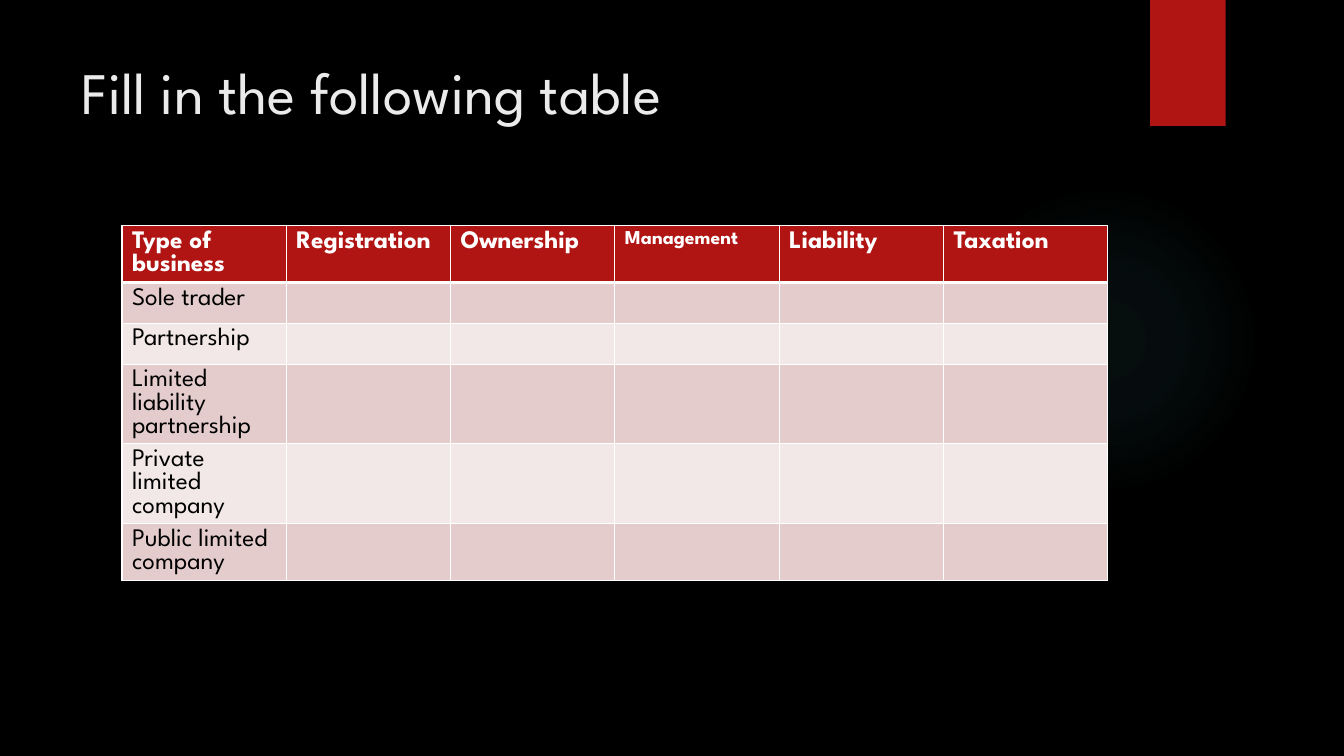
from dataclasses import dataclass

from pptx import Presentation
from pptx import util as u
from pptx.dml.color import RGBColor
from pptx.enum import shapes, text
from pptx.oxml import parse_xml
from pptx.oxml.ns import nsdecls

FONT = "League Spartan"
COLOURS = {
    "background": "000000",
    "glow": "50B9C1",
    "accent": "B01513",
    "title": "EBEBEB",
    "rule": "FFFFFF",
    "header text": "FFFFFF",
    "body text": "000000",
    "odd row": "E4CCCC",
    "even row": "F2E8E7",
}
UNIT = u.Inches(1 / 12)  # the slide is a grid of 160 columns by 90 rows
GLOW_STOPS = ((0, 7), (36, 6), (69, 0))  # position and opacity, in percent
ROW_HEIGHT = 4.87


@dataclass(frozen=True)
class Area:
    column: float
    row: float
    columns: float
    rows: float

    def emu(self) -> tuple[int, ...]:
        return tuple(round(n * UNIT) for n in (self.column, self.row, self.columns, self.rows))


@dataclass(frozen=True)
class Heading:
    label: str
    size: int = 18


HEADINGS = (
    Heading("Type of business"),
    Heading("Registration"),
    Heading("Ownership"),
    Heading("Management", 14),
    Heading("Liability"),
    Heading("Taxation"),
)
BUSINESSES = (
    "Sole trader",
    "Partnership",
    "Limited liability partnership",
    "Private limited company",
    "Public limited company",
)
TITLE_AREA = Area(8.52, 6, 123.48, 18.36)
GLOW_AREA = Area(112.92, 21.96, 36.96, 36.96)
RIBBON_AREA = Area(136.92, 0, 9, 15)
TABLE_AREA = Area(14.52, 26.88, 117.36, ROW_HEIGHT * (len(BUSINESSES) + 1))


def colour(name: str) -> RGBColor:
    return RGBColor.from_string(COLOURS[name])


def style(paragraph, size: int, colour_name: str, bold: bool = False) -> None:
    font = paragraph.font
    font.name, font.size, font.bold = FONT, u.Pt(size), bold
    font.color.rgb = colour(colour_name)


def add_plain_shape(slide, kind, area: Area, colour_name: str):
    shape = slide.shapes.add_shape(kind, *area.emu())
    shape.shadow.inherit = False
    shape.line.fill.background()
    shape.fill.solid()
    shape.fill.fore_color.rgb = colour(colour_name)
    return shape


def add_glow(slide) -> None:
    glow = add_plain_shape(slide, shapes.MSO_SHAPE.OVAL, GLOW_AREA, "glow")
    stops = "".join(
        f'<a:gs pos="{position * 1000}"><a:srgbClr val="{COLOURS["glow"]}">'
        f'<a:alpha val="{opacity * 1000}"/></a:srgbClr></a:gs>'
        for position, opacity in GLOW_STOPS
    )
    gradient = parse_xml(
        f'<a:gradFill {nsdecls("a")} rotWithShape="1"><a:gsLst>{stops}</a:gsLst>'
        '<a:path path="circle"><a:fillToRect l="50000" t="50000" r="50000" b="50000"/>'
        "</a:path></a:gradFill>"
    )
    properties = glow.element.spPr
    properties.replace(properties.find("{*}solidFill"), gradient)


def fill_cell(cell, fill_name: str, top: int = 1, bottom: int = 1) -> None:
    """Fill the cell and rule its edges; top and bottom are widths in points."""
    cell.fill.solid()
    cell.fill.fore_color.rgb = colour(fill_name)
    properties = cell._tc.get_or_add_tcPr()
    for index, (edge, width) in enumerate({"L": 1, "R": 1, "T": top, "B": bottom}.items()):
        properties.insert(index, parse_xml(
            f'<a:ln{edge} {nsdecls("a")} w="{u.Pt(width)}"><a:solidFill>'
            f'<a:srgbClr val="{COLOURS["rule"]}"/></a:solidFill></a:ln{edge}>'
        ))


def add_business_table(slide) -> None:
    table = slide.shapes.add_table(
        len(BUSINESSES) + 1, len(HEADINGS), *TABLE_AREA.emu()
    ).table
    for cell, heading in zip(table.rows[0].cells, HEADINGS):
        cell.text = heading.label
        style(cell.text_frame.paragraphs[0], heading.size, "header text", bold=True)
        fill_cell(cell, "accent", bottom=3)
    for number, business in enumerate(BUSINESSES, start=1):
        table.cell(number, 0).text = business
        for cell in table.rows[number].cells:
            style(cell.text_frame.paragraphs[0], 18, "body text")
            fill_cell(cell, "odd row" if number % 2 else "even row", top=3 if number == 1 else 1)


def set_title(slide, wording: str) -> None:
    title = slide.shapes.title
    title.left, title.top, title.width, title.height = TITLE_AREA.emu()
    frame = title.text_frame
    frame.text = wording
    frame.word_wrap = True
    frame.auto_size = text.MSO_AUTO_SIZE.NONE
    frame.vertical_anchor = text.MSO_ANCHOR.TOP
    heading = frame.paragraphs[0]
    heading.alignment = text.PP_ALIGN.LEFT
    style(heading, 42, "title")


def main() -> None:
    presentation = Presentation()
    presentation.slide_width, presentation.slide_height = 160 * UNIT, 90 * UNIT
    slide = presentation.slides.add_slide(presentation.slide_layouts.get_by_name("Title Only"))
    slide.background.fill.solid()
    slide.background.fill.fore_color.rgb = colour("background")
    add_glow(slide)
    add_plain_shape(slide, shapes.MSO_SHAPE.RECTANGLE, RIBBON_AREA, "accent")
    set_title(slide, "Fill in the following table")
    add_business_table(slide)
    presentation.save("out.pptx")


if __name__ == "__main__":
    main()
